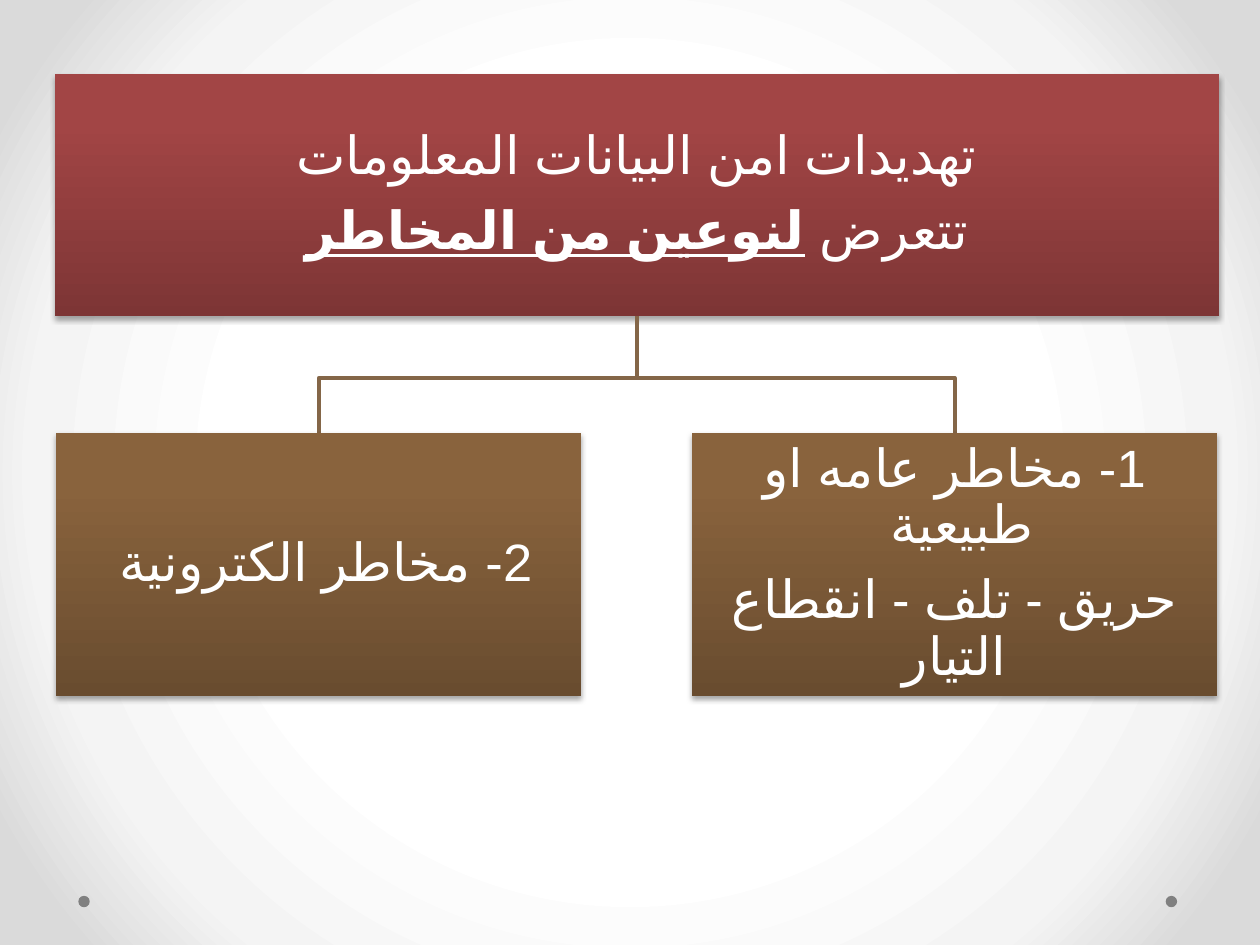
from dataclasses import dataclass

from lxml import etree
from pptx import Presentation
from pptx.dml.color import RGBColor
from pptx.enum.lang import MSO_LANGUAGE_ID
from pptx.enum.shapes import MSO_SHAPE
from pptx.enum.text import MSO_ANCHOR, MSO_AUTO_SIZE, PP_ALIGN
from pptx.oxml.ns import qn
from pptx.util import Cm, Pt

RECT, OVAL = MSO_SHAPE.RECTANGLE, MSO_SHAPE.OVAL
MIDDLE, CENTER, FIXED = MSO_ANCHOR.MIDDLE, PP_ALIGN.CENTER, MSO_AUTO_SIZE.NONE
ARABIC = MSO_LANGUAGE_ID.ARABIC_EGYPT


@dataclass(frozen=True)
class Theme:
    ink: str = "FFFFFF"
    line: str = "846648"
    dot: str = "808080"
    shade: str = "000000"
    back: tuple = ((50, "FFFFFF"), (76, "F4F4F4"), (92, "DADADA"))
    red: tuple = ((0, "7D3535"), (80, "A24545"), (100, "A44343"))
    brown: tuple = ((0, "694C2F"), (80, "89633D"), (100, "8B633C"))
    head: str = "Vollkorn"
    body: str = "League Spartan"
    script: str = "Arial"
    size: float = 30
    stroke: float = 2.25


def add(node, tag, **attrs):
    return etree.SubElement(node, qn(tag), {k: str(v) for k, v in attrs.items()})


def blend(node, stops, ring=False):
    grad = node.find(".//" + qn("a:gradFill"))
    for child in list(grad):
        grad.remove(child)
    rows = add(grad, "a:gsLst")
    for pos, color in stops:
        add(add(rows, "a:gs", pos=pos * 1000), "a:srgbClr", val=color)
    if ring:
        way = add(grad, "a:path", path="circle")
        add(way, "a:fillToRect", l=50000, t=50000, r=50000, b=50000)
    else:
        add(grad, "a:lin", ang=270 * 60000, scaled=0)


def write(para, text, font, script, size, color, strong=False):
    run = para.add_run()
    run.text = text
    run.font.name, run.font.size = font, Pt(size)
    run.font.color.rgb = RGBColor.from_string(color)
    run.font.bold = run.font.underline = strong
    run.font.language_id = ARABIC
    add(run._r.get_or_add_rPr(), "a:cs", typeface=script)


class Chart:
    def __init__(self, slide, theme):
        self.slide, self.theme = slide, theme

    def paint(self):
        self.slide.background.fill.gradient()
        blend(self.slide.background._cSld, self.theme.back, ring=True)

    def dot(self, x, y, size):
        shape = self.slide.shapes.add_shape(OVAL, Cm(x), Cm(y), Cm(size), Cm(size))
        shape.shadow.inherit = False
        shape.fill.solid()
        shape.fill.fore_color.rgb = RGBColor.from_string(self.theme.dot)
        shape.line.fill.background()

    def join(self, *points):
        start, *rest = [(Cm(x), Cm(y)) for x, y in points]
        pen = self.slide.shapes.build_freeform(*start)
        pen.add_line_segments(rest, close=False)
        shape = pen.convert_to_shape()
        shape.shadow.inherit = False
        shape.fill.background()
        shape.line.color.rgb = RGBColor.from_string(self.theme.line)
        shape.line.width = Pt(self.theme.stroke)

    def title(self, area, lines):
        shape = self.slide.shapes.title
        shape.left, shape.top, shape.width, shape.height = map(Cm, area)
        self.dress(shape, lines, self.theme.red, self.theme.head)

    def box(self, area, lines):
        shape = self.slide.shapes.add_shape(RECT, *map(Cm, area))
        self.dress(shape, lines, self.theme.brown, self.theme.body)

    def dress(self, shape, lines, stops, font):
        shape.fill.gradient()
        blend(shape._element.spPr, stops)
        shape.line.fill.background()
        shape.shadow.inherit = False
        glow = add(shape._element.spPr.find(qn("a:effectLst")), "a:outerShdw",
                   blurRad=Pt(3.1), dist=Pt(1.8), dir=90 * 60000, rotWithShape=0)
        add(add(glow, "a:srgbClr", val=self.theme.shade), "a:alpha", val=35000)
        frame = shape.text_frame
        frame.word_wrap, frame.auto_size = True, FIXED
        frame.vertical_anchor = MIDDLE
        frame.margin_left = frame.margin_right = Cm(0.05)
        frame.margin_top = frame.margin_bottom = Cm(0.05)
        for i, runs in enumerate(lines):
            para = frame.add_paragraph() if i else frame.paragraphs[0]
            para.alignment, para.line_spacing = CENTER, 0.9
            para.space_before, para.space_after = Pt(0), Pt(self.theme.size * 0.35)
            para._p.get_or_add_pPr().set("rtl", "1")
            for text, strong in runs:
                write(para, text, font=font, script=self.theme.script,
                      size=self.theme.size, color=self.theme.ink, strong=strong)


def main():
    deck = Presentation()
    deck.slide_width, deck.slide_height = Cm(25.4), Cm(19.05)
    chart = Chart(deck.slides.add_slide(deck.slide_layouts[5]), Theme())
    chart.paint()
    for x in (23.5, 1.58):
        chart.dot(x, 18.06, 0.23)

    wide, top, tall = 10.59, 8.73, 5.3
    mid, base, bend = 12.84, 6.38, 7.62
    kids = (
        (1.13, [[("2- مخاطر الكترونية ", False)]]),
        (13.95, [[("1- مخاطر عامه او طبيعية ", False)],
                 [("حريق - تلف - انقطاع التيار", False)]]),
    )
    chart.title((1.1, 1.5, 23.47, 4.88), [
        [("تهديدات امن البيانات المعلومات", False)],
        [("تتعرض ", False), ("لنوعين من المخاطر", True)],
    ])
    for left, lines in kids:
        end = left + wide / 2
        chart.join((mid, base), (mid, bend), (end, bend), (end, top))
        chart.box((left, top, wide, tall), lines)
    deck.save("out.pptx")


if __name__ == "__main__":
    main()
